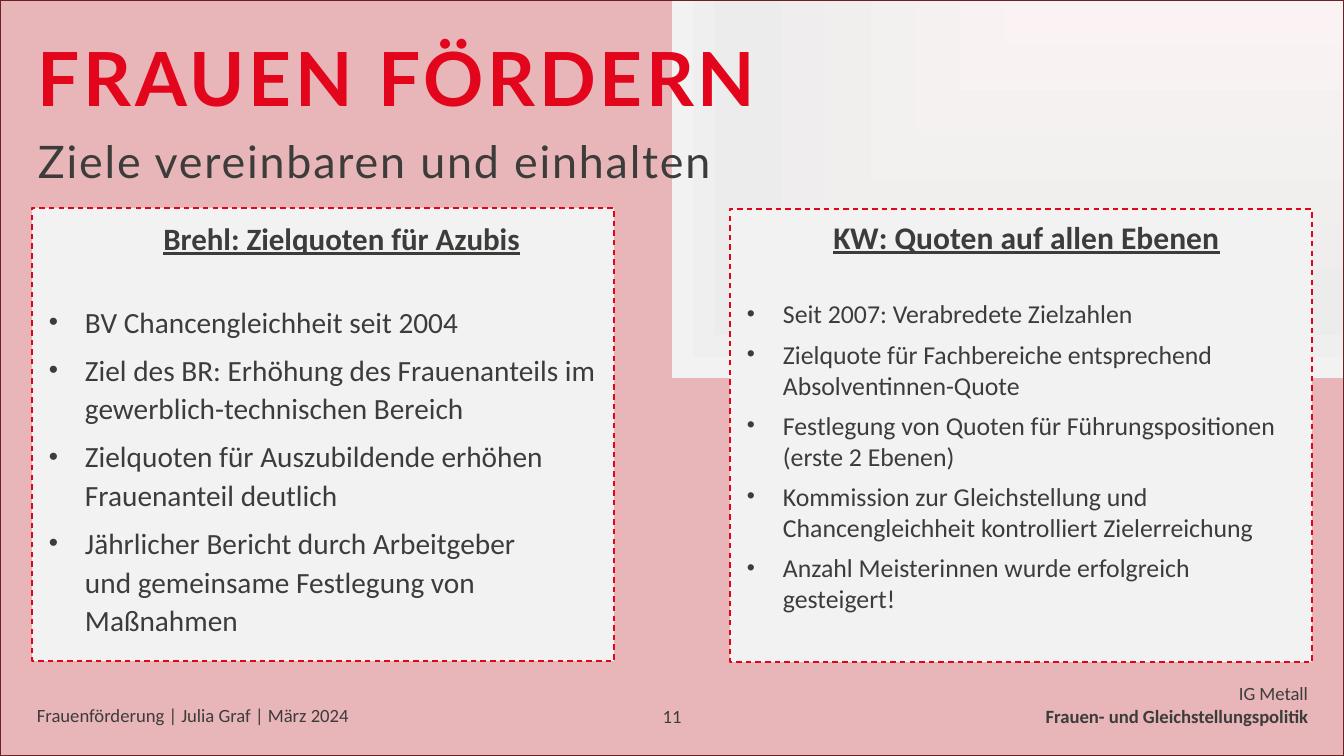
from copy import deepcopy

from lxml.etree import SubElement
from pptx import Presentation
from pptx.dml.color import RGBColor
from pptx.enum.dml import MSO_LINE
from pptx.enum.shapes import MSO_SHAPE
from pptx.enum.text import MSO_ANCHOR, PP_ALIGN
from pptx.oxml import parse_xml
from pptx.oxml.ns import nsdecls, qn
from pptx.util import Pt

EMU_PER_PX = 914400 / 134.4
SLIDE_WIDTH, SLIDE_HEIGHT = 1344, 756

RED = RGBColor(0xE3, 0x05, 0x1B)
BORDER_RED = RGBColor(0xE2, 0x05, 0x1A)
DARK_RED = RGBColor(0x6A, 0x21, 0x26)
TEXT_GREY = RGBColor(0x3C, 0x3C, 0x3B)
PANEL_GREY = RGBColor(0xF2, 0xF2, 0xF2)
PINK = RGBColor(0xE8, 0xB5, 0xB9)
GRADIENT_STOPS = [
    (0, RGBColor(0xFB, 0xF3, 0xF3)),
    (83, RGBColor(0xEC, 0xEC, 0xEC)),
    (100, PANEL_GREY),
    (100, PINK),
]

PANEL_WIDTH, PANEL_HEIGHT = 582, 453
BULLET_INDENT = 37
GAP_BELOW_HEADING, GAP_BETWEEN_BULLETS = 23, 5

LEFT_BULLETS = [
    "BV Chancengleichheit seit 2004",
    "Ziel des BR: Erhöhung des Frauenanteils im gewerblich-technischen Bereich",
    "Zielquoten für Auszubildende erhöhen Frauenanteil deutlich",
    "Jährlicher Bericht durch Arbeitgeber\nund gemeinsame Festlegung von Maßnahmen",
]
RIGHT_BULLETS = [
    "Seit 2007: Verabredete Zielzahlen",
    "Zielquote für Fachbereiche entsprechend Absolventinnen-Quote",
    "Festlegung von Quoten für Führungspositionen (erste 2 Ebenen)",
    "Kommission zur Gleichstellung und Chancengleichheit kontrolliert Zielerreichung",
    "Anzahl Meisterinnen wurde erfolgreich\ngesteigert!",
]


def px(length):
    return round(length * EMU_PER_PX)


def add_bullet(paragraph):
    properties = paragraph._p.get_or_add_pPr()
    properties.set("marL", str(px(BULLET_INDENT)))
    properties.set("indent", str(-px(BULLET_INDENT - 1)))
    SubElement(properties, qn("a:buSzPct")).set("val", "90000")
    SubElement(properties, qn("a:buFont")).set("typeface", "Arial")
    SubElement(properties, qn("a:buChar")).set("char", "•")


def write_paragraph(frame, text, *, size, font="Calibri", color=TEXT_GREY, bold=False,
                    underline=False, align=PP_ALIGN.LEFT, line_spacing=1.0,
                    space_before=0, letter_spacing=0, margin=0, bullet=False):
    """Fill the first paragraph while it is empty, otherwise append one."""
    first = frame.paragraphs[0]
    paragraph = frame.add_paragraph() if first.runs else first
    if bullet:
        add_bullet(paragraph)
    elif margin:
        paragraph._p.get_or_add_pPr().set("marL", str(px(margin)))
    paragraph.alignment = align
    paragraph.line_spacing = line_spacing
    paragraph.space_before = Pt(space_before)
    paragraph.text = text
    for run in paragraph.runs:
        run.font.name = font
        run.font.size = Pt(size)
        run.font.bold = bold
        run.font.underline = underline
        run.font.color.rgb = color
        if letter_spacing:
            run._r.get_or_add_rPr().set("spc", str(letter_spacing * 100))
    for line_break in paragraph._p.findall(qn("a:br")):
        line_break.append(deepcopy(paragraph.runs[0]._r.rPr))


def set_up_frame(frame, insets, anchor):
    frame.word_wrap = True
    frame.vertical_anchor = anchor
    (frame.margin_left, frame.margin_top,
     frame.margin_right, frame.margin_bottom) = map(px, insets)


def add_text_box(slide, left, top, width, height, anchor=MSO_ANCHOR.TOP):
    box = slide.shapes.add_textbox(px(left), px(top), px(width), px(height))
    set_up_frame(box.text_frame, (0, 0, 0, 0), anchor)
    return box.text_frame


def add_rectangle(slide, left, top, width, height, line_color, line_width):
    shape = slide.shapes.add_shape(
        MSO_SHAPE.RECTANGLE, px(left), px(top), px(width), px(height))
    shape.shadow.inherit = False
    shape.line.color.rgb = line_color
    shape.line.width = Pt(line_width)
    return shape


def add_backdrop(slide):
    """Pink backdrop with a gradient growing from the top right corner."""
    shape = add_rectangle(slide, 0, 0, SLIDE_WIDTH, SLIDE_HEIGHT, DARK_RED, 1)
    stops = "".join(
        f'<a:gs pos="{position * 1000}"><a:srgbClr val="{color}"/></a:gs>'
        for position, color in GRADIENT_STOPS)
    gradient = parse_xml(
        f'<a:gradFill {nsdecls("a")} rotWithShape="1"><a:gsLst>{stops}</a:gsLst>'
        '<a:path path="rect"><a:fillToRect l="100000" b="100000"/></a:path>'
        '</a:gradFill>')
    shape._element.spPr.find(qn("a:prstGeom")).addnext(gradient)


def add_panel(slide, left, top, heading, bullets, *, heading_size, heading_spacing,
              heading_margin, bullet_size, bullet_spacing):
    shape = add_rectangle(slide, left, top, PANEL_WIDTH, PANEL_HEIGHT, BORDER_RED, 0.75)
    shape.line.dash_style = MSO_LINE.DASH
    shape.fill.solid()
    shape.fill.fore_color.rgb = PANEL_GREY
    frame = shape.text_frame
    set_up_frame(frame, (16, 16, 5, 5), MSO_ANCHOR.TOP)
    write_paragraph(frame, heading, size=heading_size, bold=True, underline=True,
                    align=PP_ALIGN.CENTER, line_spacing=heading_spacing,
                    margin=heading_margin)
    for index, text in enumerate(bullets):
        gap = GAP_BETWEEN_BULLETS if index else GAP_BELOW_HEADING
        write_paragraph(frame, text, size=bullet_size, line_spacing=bullet_spacing,
                        space_before=gap, bullet=True)


def add_footer(slide):
    event = add_text_box(slide, 37, 703, 523, 23, MSO_ANCHOR.BOTTOM)
    write_paragraph(event, "Frauenförderung | Julia Graf | März 2024", size=10)
    sender = add_text_box(slide, 899, 682, 409, 45)
    write_paragraph(sender, "IG Metall", size=10, align=PP_ALIGN.RIGHT)
    write_paragraph(sender, "Frauen- und Gleichstellungspolitik", size=10, bold=True,
                    align=PP_ALIGN.RIGHT)
    number = add_text_box(slide, 607, 688, 130, 40, MSO_ANCHOR.BOTTOM)
    write_paragraph(number, "11", size=10, align=PP_ALIGN.CENTER, line_spacing=0.9)


def main():
    presentation = Presentation()
    presentation.slide_width = px(SLIDE_WIDTH)
    presentation.slide_height = px(SLIDE_HEIGHT)
    slide = presentation.slides.add_slide(presentation.slide_layouts[6])

    add_backdrop(slide)
    add_footer(slide)
    title = add_text_box(slide, 38, 42, 1259, 67)
    write_paragraph(title, "FRAUEN FÖRDERN", size=40, font="Lato", color=RED, bold=True,
                    line_spacing=0.9, letter_spacing=2)
    subtitle = add_text_box(slide, 38, 128, 1259, 73, MSO_ANCHOR.MIDDLE)
    write_paragraph(subtitle, "Ziele vereinbaren und einhalten", size=24, font="Lato",
                    line_spacing=0.9, letter_spacing=1)
    add_panel(slide, 32, 208, "Brehl: Zielquoten für Azubis", LEFT_BULLETS,
              heading_size=16.6, heading_spacing=0.9, heading_margin=26,
              bullet_size=15.7, bullet_spacing=1.1)
    add_panel(slide, 730, 209, "KW: Quoten auf allen Ebenen", RIGHT_BULLETS,
              heading_size=16.9, heading_spacing=0.8, heading_margin=0,
              bullet_size=13.8, bullet_spacing=1.0)
    presentation.save("out.pptx")


if __name__ == "__main__":
    main()
